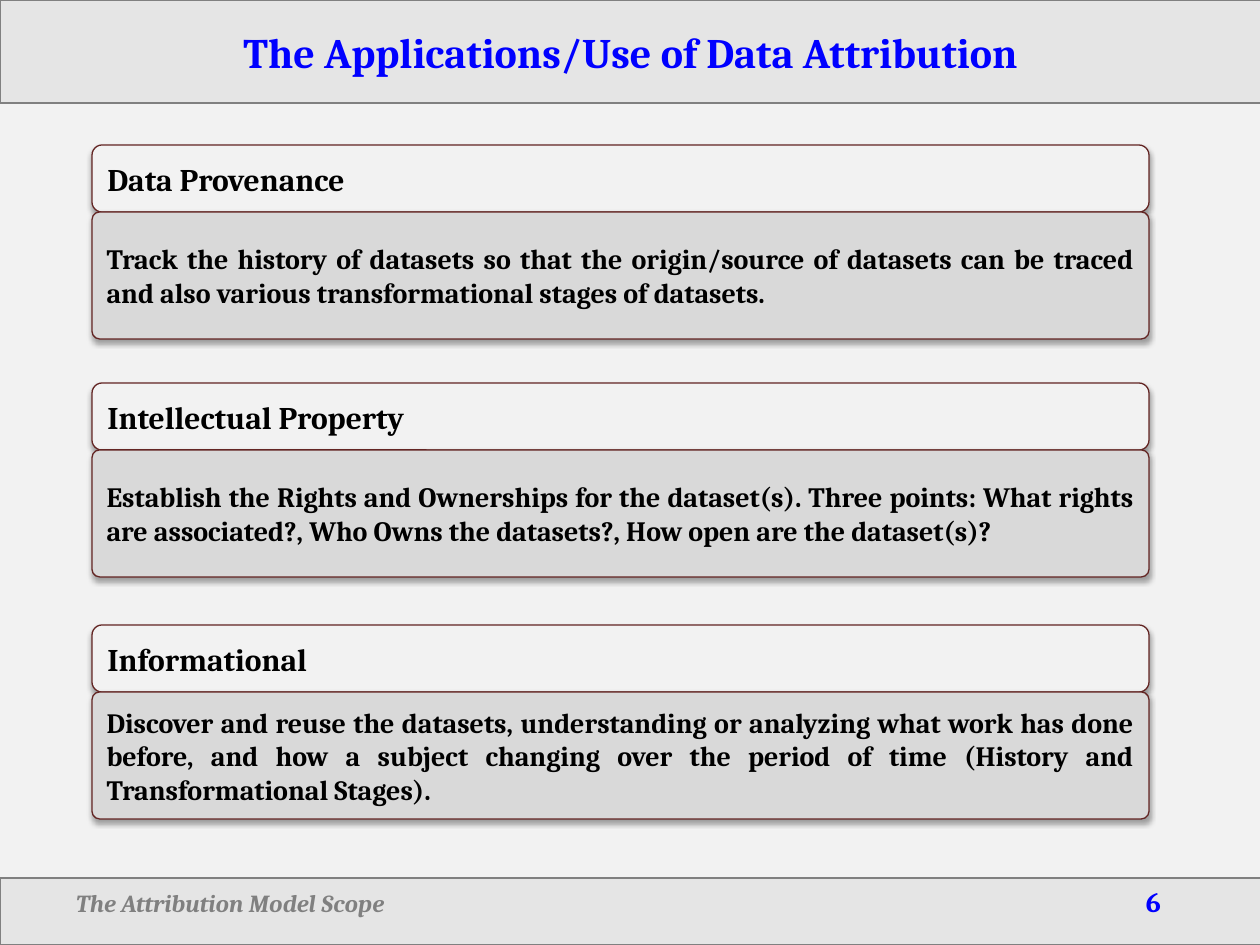
"""Build the slide on the applications of data attribution."""
import pptx
import pptx.dml.color
import pptx.enum.shapes
import pptx.enum.text
import pptx.oxml
import pptx.oxml.ns
import pptx.util

PX = 914400 // 126
RGBColor = pptx.dml.color.RGBColor
BACKGROUND = RGBColor(0xF2, 0xF2, 0xF2)
PANEL = RGBColor(0xD9, 0xD9, 0xD9)
GRAY = RGBColor(0x80, 0x80, 0x80)
MAROON = RGBColor(0x63, 0x25, 0x23)
BLUE = RGBColor(0x00, 0x00, 0xFF)
BLACK = RGBColor(0x00, 0x00, 0x00)
RECTANGLE = pptx.enum.shapes.MSO_SHAPE.RECTANGLE
ROUNDED = pptx.enum.shapes.MSO_SHAPE.ROUNDED_RECTANGLE
LEFT = pptx.enum.text.PP_ALIGN.LEFT
CENTER = pptx.enum.text.PP_ALIGN.CENTER
JUSTIFY = pptx.enum.text.PP_ALIGN.JUSTIFY
NAMESPACE = pptx.oxml.ns.nsdecls("a")
SHADOW = (
    f'<a:effectLst {NAMESPACE}><a:outerShdw blurRad="39370" dist="22860" dir="5400000" '
    'rotWithShape="0"><a:srgbClr val="000000"><a:alpha val="35000"/></a:srgbClr>'
    '</a:outerShdw></a:effectLst>'
)
CARDS = [
    (145, "Data Provenance",
     "Track the history of datasets so that the origin/source of datasets can be traced "
     "and also various transformational stages of datasets."),
    (383, "Intellectual Property",
     "Establish the Rights and Ownerships for the dataset(s). Three points: What rights "
     "are associated?, Who Owns the datasets?, How open are the dataset(s)?"),
    (625, "Informational",
     "Discover and reuse the datasets, understanding or analyzing what work has done "
     "before, and how a subject changing over the period of time (History and "
     "Transformational Stages)."),
]


def add_panel(kind, left, top, width, height, fill, line):
    shape = slide.shapes.add_shape(kind, left * PX, top * PX, width * PX, height * PX)
    shape.shadow.inherit = False
    shape.fill.solid()
    shape.fill.fore_color.rgb = fill
    shape.line.color.rgb = line
    shape.line.width = pptx.util.Pt(0.75)
    shape.text_frame.word_wrap = True
    return shape


def add_text(shape, text, size, color, alignment, italic=False):
    paragraph = shape.text_frame.paragraphs[0]
    paragraph.alignment = alignment
    run = paragraph.add_run()
    run.text = text
    font_values = {"name": "Cambria", "size": pptx.util.Pt(size), "bold": True, "italic": italic}
    for name, value in font_values.items():
        setattr(run.font, name, value)
    run.font.color.rgb = color


presentation = pptx.Presentation()
presentation.slide_width = 1260 * PX
presentation.slide_height = 945 * PX
slide = presentation.slides.add_slide(presentation.slide_layouts[6])
slide.background.fill.solid()
slide.background.fill.fore_color.rgb = BACKGROUND

header = add_panel(RECTANGLE, 0, 0, 1261, 103, PANEL, GRAY)
add_text(header, "The Applications/Use of Data Attribution", 24, BLUE, CENTER)

footer = add_panel(RECTANGLE, 0, 878, 1261, 67, PANEL, GRAY)
footer.text_frame.vertical_anchor = pptx.enum.text.MSO_ANCHOR.TOP
footer.text_frame.margin_left = 76 * PX
add_text(footer, "The Attribution Model Scope\t", 14, GRAY, LEFT, italic=True)
add_text(footer, "6", 16, BLUE, LEFT)
footer.text_frame.paragraphs[0]._p.get_or_add_pPr().append(pptx.oxml.parse_xml(
    f'<a:tabLst {NAMESPACE}><a:tab pos="{1070 * PX}" algn="l"/></a:tabLst>'))

for band in (header, footer):
    color_element = band.fill._xPr.find(".//" + pptx.oxml.ns.qn("a:srgbClr"))
    color_element.append(pptx.oxml.parse_xml(f'<a:alpha {NAMESPACE} val="50000"/>'))

for top, heading, description in CARDS:
    for text, offset, height, corner, fill, size, alignment in (
        (heading, 0, 67, 0.15, BACKGROUND, 18, LEFT),
        (description, 67, 127, 0.06, PANEL, 16, JUSTIFY),
    ):
        card = add_panel(ROUNDED, 92, top + offset, 1057, height, fill, MAROON)
        card.adjustments[0] = corner
        properties = card._element.spPr
        properties.replace(properties.find(pptx.oxml.ns.qn("a:effectLst")),
                           pptx.oxml.parse_xml(SHADOW))
        add_text(card, text, size, BLACK, alignment)

presentation.save("out.pptx")
